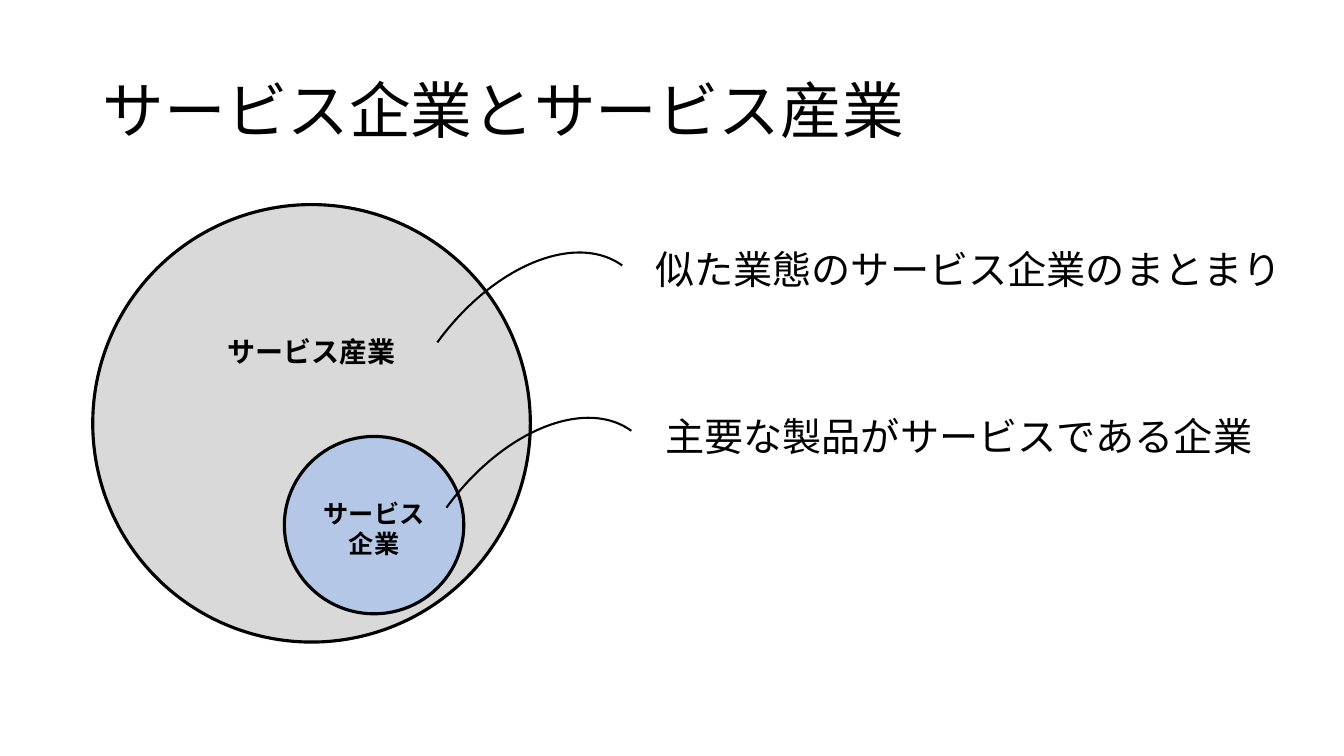
from lxml import etree
from pptx import Presentation
from pptx import util as u
from pptx.dml.color import RGBColor
from pptx.enum import shapes, text
from pptx.oxml.ns import qn

FONT = "Noto Sans CJK JP"
INK = {"black": "000000", "grey": "D9D9D9", "blue": "B4C7E7"}
KIND = shapes.MSO_SHAPE


def write(shape, words, size, bold=False, align=text.PP_ALIGN.LEFT):
    """Fill the shape with one paragraph, in the font for Latin and Japanese."""
    shape.text_frame.word_wrap = True
    para = shape.text_frame.paragraphs[0]
    para.text = words
    para.alignment = align
    font = para.font
    font.size, font.bold = u.Pt(size), bold
    font.color.rgb = RGBColor.from_string(INK["black"])
    font.name = FONT
    props = para._p.pPr.find(qn("a:defRPr"))
    etree.SubElement(props, qn("a:ea")).set("typeface", FONT)
    return para


def draw(kind, box, width, fill=None):
    shape = slide.shapes.add_shape(kind, *map(u.Inches, box))
    shape.shadow.inherit = False
    shape.line.color.rgb = RGBColor.from_string(INK["black"])
    shape.line.width = u.Pt(width)
    if fill:
        shape.fill.solid()
        shape.fill.fore_color.rgb = RGBColor.from_string(INK[fill])
    else:
        shape.fill.background()
    return shape


deck = Presentation()
deck.slide_width, deck.slide_height = u.Inches(13.33), u.Inches(7.5)
slide = deck.slides.add_slide(deck.slide_layouts[5])

title = slide.shapes.title
title.left, title.top = u.Inches(0.92), u.Inches(0.4)
title.width, title.height = u.Inches(11.5), u.Inches(1.45)
title.text_frame.vertical_anchor = text.MSO_ANCHOR.MIDDLE
write(title, "サービス企業とサービス産業", 44).line_spacing = 0.9

# Nested circles
draw(KIND.FLOWCHART_CONNECTOR, (0.92, 2.03, 4.34, 4.34), 2.25, "grey")
draw(KIND.FLOWCHART_CONNECTOR, (2.82, 4.33, 1.78, 1.76), 2.25, "blue")

# Curved leaders to the notes
for left, top in [(3.48, 2.97), (3.57, 4.61)]:
    draw(KIND.ARC, (left, top, 3.39, 2.07), 1.5).rotation = 306

# Circle names, then notes
mid, start = text.PP_ALIGN.CENTER, text.PP_ALIGN.LEFT
labels = [
    ("サービス産業", (2.02, 3.27, 2.14, 0.44), 20, True, mid),
    ("サービス企業", (3.03, 4.89, 1.36, 0.71), 18, True, mid),
    ("似た業態のサービス企業のまとまり", (6.4, 2.38, 6.5, 0.57), 28, False, start),
    ("主要な製品がサービスである企業", (6.5, 4.04, 6.4, 0.57), 28, False, start),
]
for words, box, size, bold, align in labels:
    label = slide.shapes.add_textbox(*map(u.Inches, box))
    write(label, words, size, bold, align)
    label.text_frame.auto_size = text.MSO_AUTO_SIZE.SHAPE_TO_FIT_TEXT

deck.save("out.pptx")
